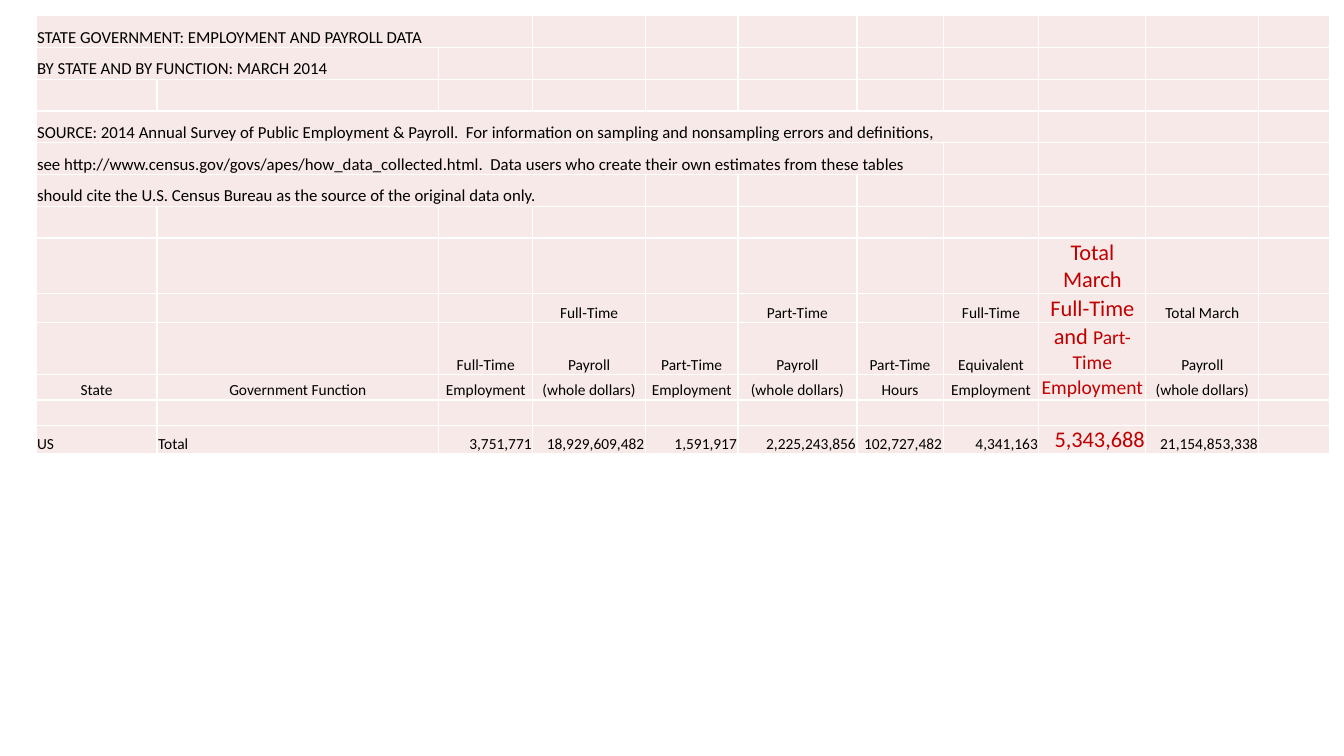
from lxml import etree
from pptx import Presentation
from pptx.dml.color import RGBColor
from pptx.enum import text
from pptx.oxml import ns
from pptx.util import Pt

INK, RED, PINK, WHITE = "000000", "C00000", "F7E9E8", "FFFFFF"
LEFT, MID, RIGHT = text.PP_ALIGN.LEFT, text.PP_ALIGN.CENTER, text.PP_ALIGN.RIGHT
KEY = 8  # column of total employment, set in red


def hue(code):
    return RGBColor.from_string(code)


def edge(cell):
    """Draw white 1 pt borders, ahead of the fill."""
    props = cell._tc.get_or_add_tcPr()
    for spot, side in enumerate(("lnL", "lnR", "lnT", "lnB")):
        line = etree.Element(ns.qn("a:" + side), w=str(Pt(1)))
        fill = etree.SubElement(line, ns.qn("a:solidFill"))
        etree.SubElement(fill, ns.qn("a:srgbClr"), val=WHITE)
        props.insert(spot, line)


prs = Presentation()
prs.slide_width, prs.slide_height = Pt(960), Pt(540)
slide = prs.slides.add_slide(prs.slide_layouts[6])

# Notes above the figures: row -> (columns spanned, wording)
notes = {
    0: (3, "STATE GOVERNMENT: EMPLOYMENT AND PAYROLL DATA"),
    1: (2, "BY STATE AND BY FUNCTION: MARCH 2014"),
    3: (8, "SOURCE: 2014 Annual Survey of Public Employment & Payroll.  "
           "For information on sampling and nonsampling errors and definitions,"),
    4: (7, "see http://www.census.gov/govs/apes/how_data_collected.html.  "
           "Data users who create their own estimates from these tables"),
    5: (4, "should cite the U.S. Census Bureau as the source of the original data only."),
}

# Headings and figures, from row 7 down
FIRST = 7
body = [
    ["", "", "", "", "", "", "", "", "Total March", "", ""],
    ["", "", "", "Full-Time", "", "Part-Time", "", "Full-Time",
     "Full-Time", "Total March", ""],
    ["", "", "Full-Time", "Payroll", "Part-Time", "Payroll", "Part-Time",
     "Equivalent", "and Part-Time", "Payroll", ""],
    ["State", "Government Function", "Employment", "(whole dollars)",
     "Employment", "(whole dollars)", "Hours", "Employment", "Employment",
     "(whole dollars)", ""],
    [""] * 11,
    ["US", "Total", "3,751,771", "18,929,609,482", "1,591,917",
     "2,225,243,856", "102,727,482", "4,341,163", "5,343,688",
     "21,154,853,338", ""],
]
LAST = FIRST + len(body) - 1

# Table frame
wide = [86.4, 201.2, 67.2, 80.5, 66.1, 85, 61.6, 68.4, 76.4, 80.7, 50.4]
high = [22.7] * FIRST + [39.4, 20.4, 37.4, 18, 18.2, 20.2]
frame = slide.shapes.add_table(len(high), len(wide), Pt(25.8), Pt(11.3),
                               Pt(sum(wide)), Pt(sum(high)))
table = frame.table
table.first_row = table.horz_banding = False
for col, size in zip(table.columns, wide):
    col.width = Pt(size)
for row, size in zip(table.rows, high):
    row.height = Pt(size)

# Cells
for r in range(len(high)):
    for c in range(len(wide)):
        cell = table.cell(r, c)
        cell.fill.solid()
        cell.fill.fore_color.rgb = hue(PINK)
        edge(cell)
        cell.vertical_anchor = text.MSO_ANCHOR.BOTTOM
        cell.margin_left = cell.margin_right = cell.margin_top = Pt(0.7)
        cell.margin_bottom = 0
        para = cell.text_frame.paragraphs[0]
        if r < FIRST:
            words = notes[r][1] if r in notes and c == 0 else ""
            size, ink, side = 12, INK, LEFT
        else:
            words = body[r - FIRST][c]
            size, ink = (16, RED) if c == KEY else (11, INK)
            side = MID if r < LAST else LEFT if c < 2 else RIGHT
        if not words:  # keep empty cells from stretching the row
            etree.SubElement(para._p, ns.qn("a:endParaRPr"), sz="1100")
            continue
        para.alignment = side
        parts = ["and ", "Part-Time"] if words == "and Part-Time" else [words]
        for part in parts:
            run = para.add_run()
            run.text = part
            font = run.font
            font.name = "Calibri"
            small = c == KEY and part in ("Part-Time", "Employment")
            font.size = Pt(14 if small else size)
            font.color.rgb = hue(ink)

# Notes run across several columns
for r, (span, words) in notes.items():
    table.cell(r, 0).merge(table.cell(r, span - 1))

prs.save("out.pptx")
